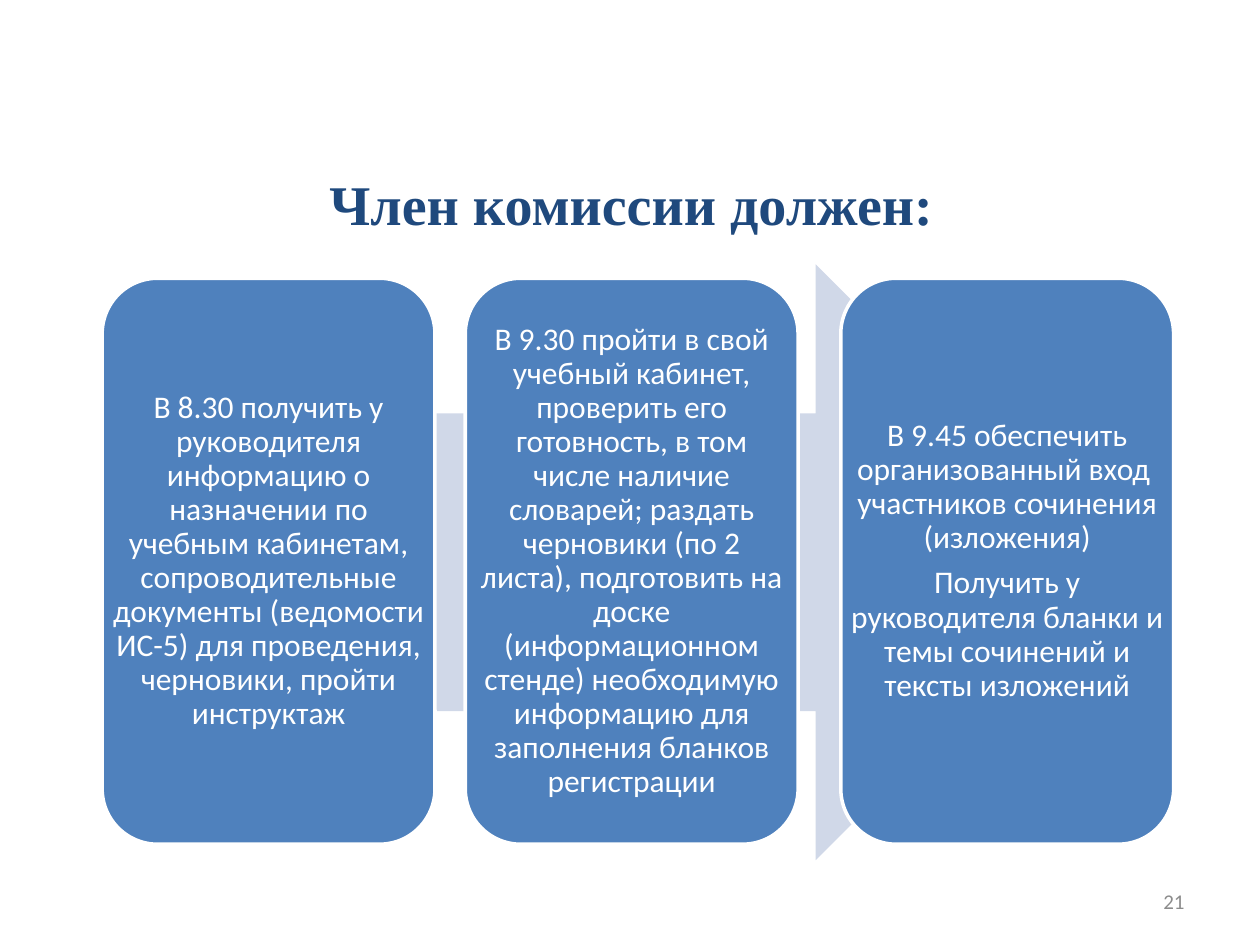
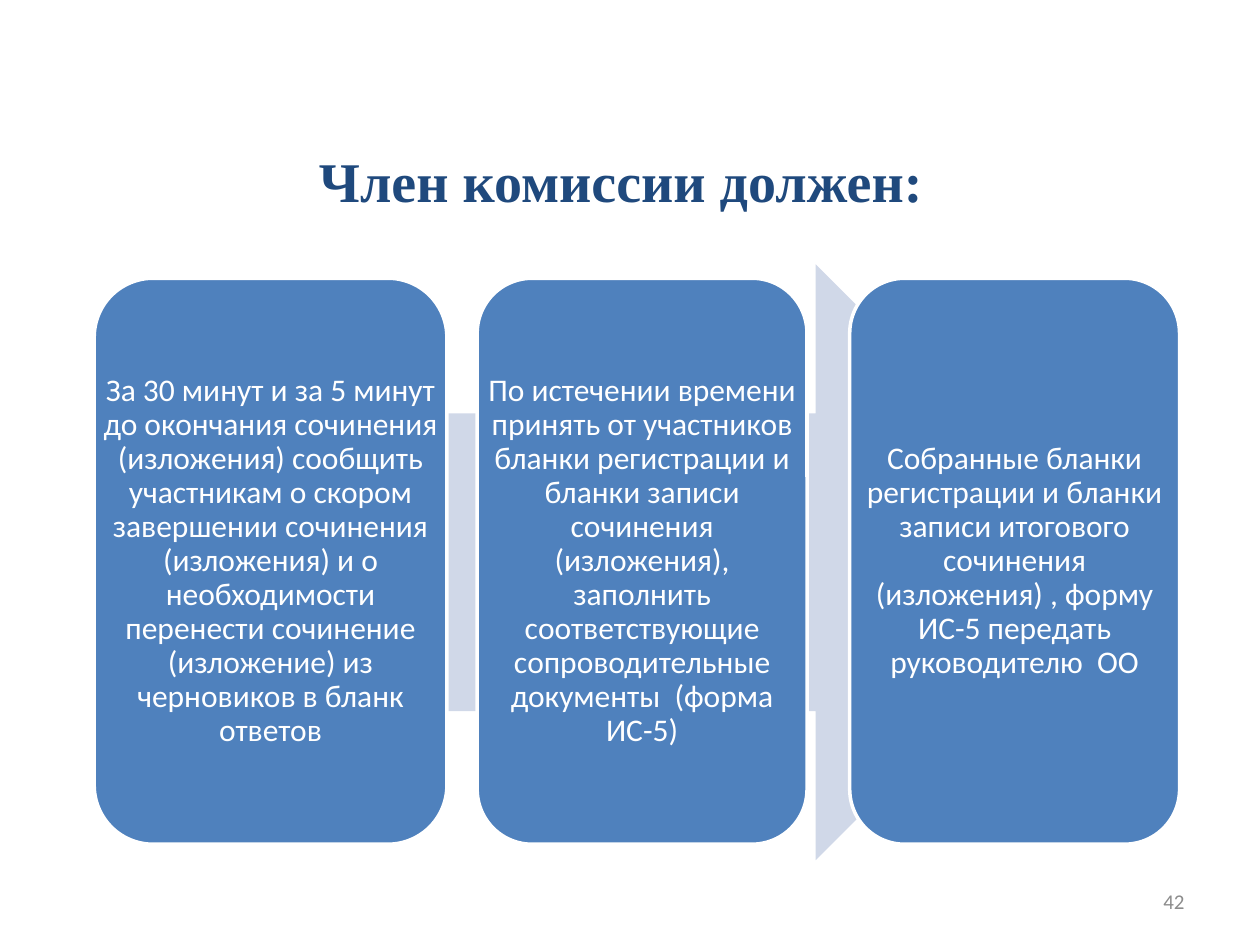
from pptx import Presentation
from pptx.dml.color import RGBColor
from pptx.enum.shapes import MSO_SHAPE
from pptx.enum.text import MSO_ANCHOR, MSO_AUTO_SIZE, PP_ALIGN
from pptx.util import Cm, Pt

ARROW, CARD = MSO_SHAPE.RIGHT_ARROW, MSO_SHAPE.ROUNDED_RECTANGLE
MIDDLE, NO_FIT = MSO_ANCHOR.MIDDLE, MSO_AUTO_SIZE.NONE
CENTER, RIGHT = PP_ALIGN.CENTER, PP_ALIGN.RIGHT

WHITE, BLUE, NAVY = "FFFFFF", "4F81BD", "1F497D"
PALE, GREY = "D0D8E8", "8C8C8C"
BODY_FONT, TITLE_FONT = "Calibri", "Times New Roman"

ARROW_BOX = (3.02, 5.33, 19.43, 12.01)
NUMBER_BOX = (18.2, 17.66, 5.93, 1.01)
CARD_TOP, CARD_HEIGHT = 5.61, 11.41
CARD_GAPS = (0.61, 0.86, 0)
CARD_INSET = 0.18

SLIDES = [
    {
        "number": "21",
        "title": "Член комиссии должен:",
        "title_box": (1.3, 2.51, 22.86, 3.18),
        "left": 2.06,
        "widths": (6.71, 6.71, 6.71),
        "cards": [
            ["В 8.30 получить у руководителя информацию о назначении по учебным "
             "кабинетам, сопроводительные документы (ведомости ИС-5) для "
             "проведения, черновики, пройти инструктаж"],
            ["В 9.30 пройти в свой учебный кабинет, проверить его готовность, "
             "в том числе наличие словарей; раздать черновики (по 2 листа), "
             "подготовить на доске (информационном стенде) необходимую "
             "информацию для заполнения бланков регистрации"],
            ["В 9.45 обеспечить организованный вход  участников сочинения "
             "(изложения)",
             "Получить у руководителя бланки и темы сочинений и тексты "
             "изложений"],
        ],
    },
    {
        "number": "42",
        "title": "Член комиссии должен:",
        "title_box": (1.09, 2.34, 22.86, 2.59),
        "left": 1.9,
        "widths": (7.11, 6.65, 6.65),
        "cards": [
            ["За 30 минут и за 5 минут до окончания сочинения (изложения) "
             "сообщить участникам о скором завершении сочинения (изложения) "
             "и о необходимости перенести сочинение (изложение) из черновиков "
             "в бланк ответов"],
            ["По истечении времени принять от участников бланки регистрации "
             "и бланки записи сочинения (изложения), заполнить соответствующие "
             "сопроводительные документы  (форма ИС-5)"],
            ["Собранные бланки регистрации и бланки записи итогового сочинения "
             "(изложения) , форму ИС-5 передать руководителю  ОО"],
        ],
    },
]


def rgb(value):
    return RGBColor.from_string(value)


def lengths(box):
    return [Cm(v) for v in box]


def write(sp, paragraphs, size, color, font=BODY_FONT, align=CENTER, bold=False):
    tf = sp.text_frame
    tf.word_wrap = True
    tf.auto_size = NO_FIT
    tf.vertical_anchor = MIDDLE
    for i, text in enumerate(paragraphs):
        p = tf.paragraphs[0] if i == 0 else tf.add_paragraph()
        p.alignment = align
        r = p.add_run()
        r.text = text
        r.font.name = font
        r.font.size = Pt(size)
        r.font.bold = bold
        r.font.color.rgb = rgb(color)
    return tf


def add_block(s, kind, box, fill, line=None):
    sp = s.shapes.add_shape(kind, *lengths(box))
    sp.shadow.inherit = False
    sp.fill.solid()
    sp.fill.fore_color.rgb = rgb(fill)
    if line:
        sp.line.color.rgb = rgb(line)
        sp.line.width = Pt(2)
    else:
        sp.line.fill.background()


def add_card(s, box, paragraphs):
    add_block(s, CARD, box, BLUE, WHITE)
    tf = write(s.shapes.add_textbox(*lengths(box)), paragraphs, 18, WHITE)
    tf.margin_left = tf.margin_right = Cm(CARD_INSET)
    tf.margin_top = tf.margin_bottom = Cm(CARD_INSET)
    for p in tf.paragraphs:
        p.line_spacing = 0.9
        p.space_after = Pt(6.3)


def add_slide(prs, content):
    s = prs.slides.add_slide(prs.slide_layouts[5])
    title = s.shapes.title
    title.left, title.top, title.width, title.height = lengths(content["title_box"])
    write(title, [content["title"]], 32, NAVY, TITLE_FONT, bold=True)
    number = s.shapes.add_textbox(*lengths(NUMBER_BOX))
    write(number, [content["number"]], 12, GREY, align=RIGHT)

    add_block(s, ARROW, ARROW_BOX, PALE)
    left = content["left"]
    for width, gap, paragraphs in zip(content["widths"], CARD_GAPS, content["cards"]):
        add_card(s, (left, CARD_TOP, width, CARD_HEIGHT), paragraphs)
        left += width + gap


def main():
    prs = Presentation()
    prs.slide_width, prs.slide_height = Cm(25.4), Cm(19.05)
    for content in SLIDES:
        add_slide(prs, content)
    prs.save("out.pptx")


if __name__ == "__main__":
    main()
